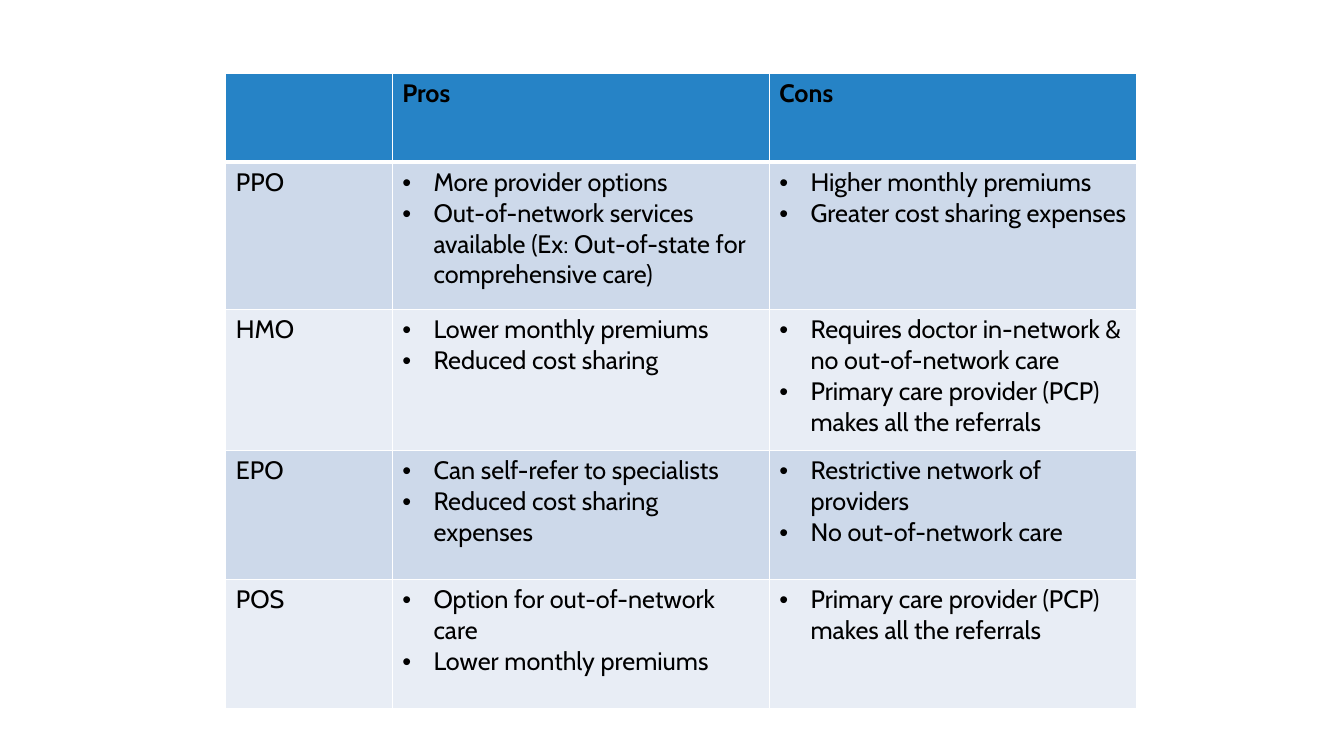
from lxml import etree
from pptx import Presentation
from pptx.dml.color import RGBColor
from pptx.oxml.ns import qn
from pptx.util import Inches, Pt


def color(value):
    return RGBColor.from_string(value)


def add_border(cell, side, points):
    line = etree.SubElement(cell._tc.get_or_add_tcPr(), qn(f"a:ln{side}"), w=str(Pt(points)))
    fill = etree.SubElement(line, qn("a:solidFill"))
    etree.SubElement(fill, qn("a:srgbClr"), val="FFFFFF")


# Each cell holds a list of paragraphs
plans = [
    ([], ["Pros"], ["Cons"]),
    (["PPO"],
     ["More provider options",
      "Out-of-network services available (Ex: Out-of-state for comprehensive care)"],
     ["Higher monthly premiums", "Greater cost sharing expenses"]),
    (["HMO"],
     ["Lower monthly premiums", "Reduced cost sharing"],
     ["Requires doctor in-network & no out-of-network care",
      "Primary care provider (PCP) makes all the referrals"]),
    (["EPO"],
     ["Can self-refer to specialists", "Reduced cost sharing expenses"],
     ["Restrictive network of providers", "No out-of-network care"]),
    (["POS"],
     ["Option for out-of-network care", "Lower monthly premiums"],
     ["Primary care provider (PCP) makes all the referrals"]),
]
column_widths = [1.65, 3.74, 3.64]
row_heights = [0.88, 1.46, 1.4, 1.28, 1.28]

# Page
deck = Presentation()
deck.slide_width, deck.slide_height = Inches(13.33), Inches(7.5)
page = deck.slides.add_slide(deck.slide_layouts[6])

# Table grid
table = page.shapes.add_table(
    len(plans), len(column_widths), Inches(2.24), Inches(0.73),
    Inches(sum(column_widths)), Inches(sum(row_heights))).table
for column, width in zip(table.columns, column_widths):
    column.width = Inches(width)
for row, height in zip(table.rows, row_heights):
    row.height = Inches(height)

# Cells: borders, fill and text
for r, plan in enumerate(plans):
    for c, lines in enumerate(plan):
        cell = table.cell(r, c)
        for side in "LRTB":
            header_rule = (r, side) in [(0, "B"), (1, "T")]
            add_border(cell, side, 3 if header_rule else 1)
        cell.fill.solid()
        band = "CDD9EA" if r % 2 else "E8EDF5"
        cell.fill.fore_color.rgb = color(band if r else "2683C6")

        cell.text = "\n".join(lines)
        for para in cell.text_frame.paragraphs:
            para.font.name = "Cabin"
            para.font.size = Pt(18)
            para.font.bold = r == 0
            para.font.color.rgb = color("000000")
            if r and c:
                properties = para._p.get_or_add_pPr()
                properties.set("marL", str(Inches(0.31)))
                properties.set("indent", str(Inches(-0.31)))
                bullet_font = etree.Element(qn("a:buFont"), typeface="Arial")
                bullet = etree.Element(qn("a:buChar"), char="•")
                properties.insert(0, bullet_font)
                properties.insert(1, bullet)

deck.save("out.pptx")
